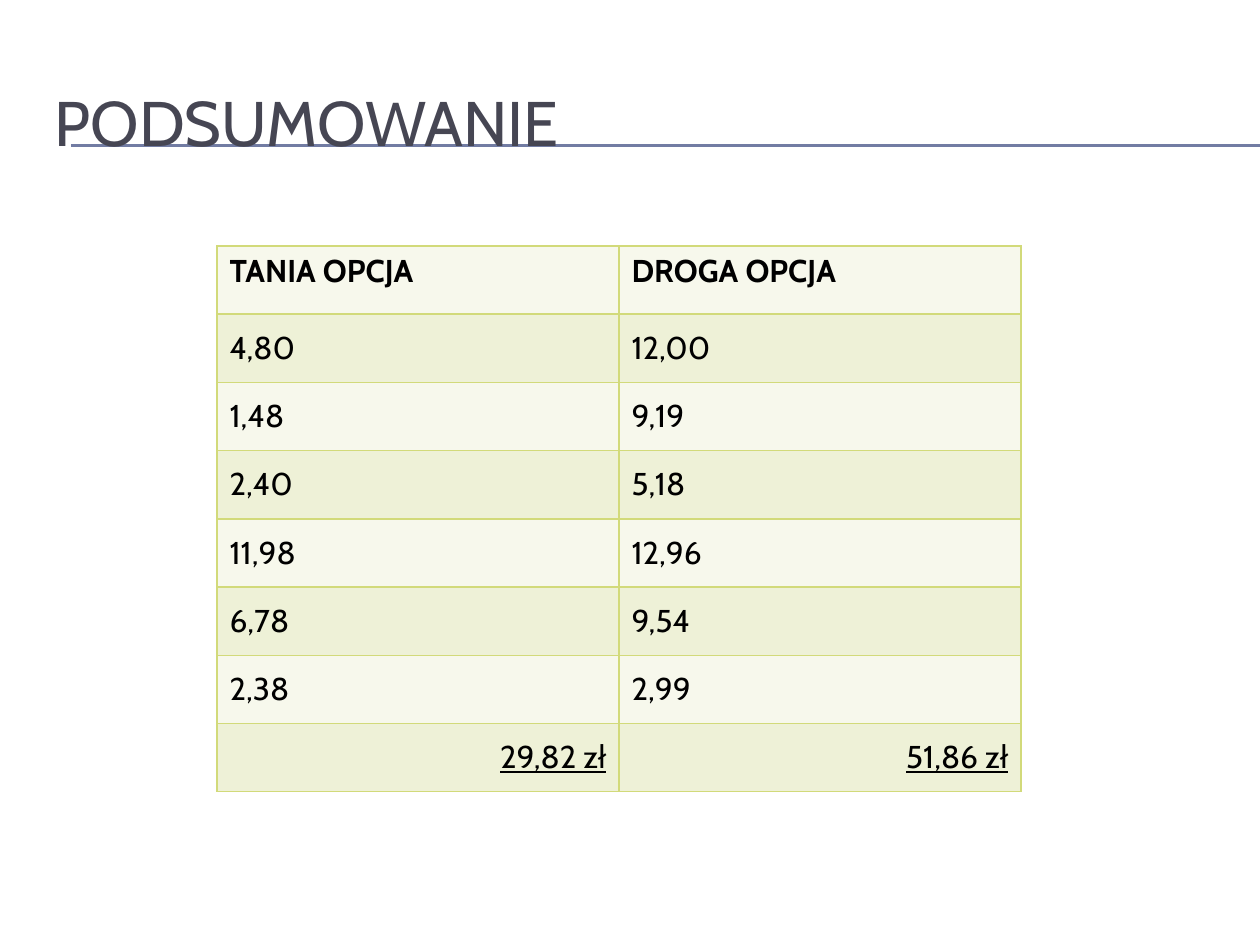
from lxml import etree
from pptx import Presentation
from pptx import util as u
from pptx.dml.color import RGBColor
from pptx.enum import shapes, text
from pptx.oxml.ns import qn

PX = 914400 // 126
FONT = "Cabin"
COLORS = {
    "title": "464653", "rule": "727CA3", "text": "000000",
    "border": "D2DA7A", "light": "F7F8EC", "dark": "EEF1D7",
}
TITLE = "PODSUMOWANIE"
ROWS = [
    ("TANIA OPCJA", "DROGA OPCJA"),
    ("4,80", "12,00"),
    ("1,48", "9,19"),
    ("2,40", "5,18"),
    ("11,98", "12,96"),
    ("6,78", "9,54"),
    ("2,38", "2,99"),
    ("29,82 zł", "51,86 zł"),
]
TITLE_BOX = (42, 63, 1197, 116)
TABLE_BOX = (217, 246, 804, 546)
RULE_X = (71, 1260)
RULES_Y = (145, 146)


def px(*vals):
    return [u.Emu(v * PX) for v in vals]


def color(name):
    return RGBColor.from_string(COLORS[name])


def style(par, size, tint, bold=False, under=False):
    for run in par.runs:
        font = run.font
        font.name, font.size = FONT, u.Pt(size)
        font.bold, font.underline = bold, under
        font.color.rgb = color(tint)


def add_rule(slide, y):
    x1, x2 = RULE_X
    rule = slide.shapes.add_connector(
        shapes.MSO_CONNECTOR.STRAIGHT, *px(x1, y, x2, y))
    rule.line.color.rgb = color("rule")
    rule.line.width = u.Pt(0.75)
    etree.SubElement(rule._element.spPr, qn("a:effectLst"))
    return rule


def add_border(cell):
    props = cell._tc.get_or_add_tcPr()
    for side in ("a:lnL", "a:lnR", "a:lnT", "a:lnB"):
        line = etree.SubElement(props, qn(side), w=str(u.Pt(1)))
        fill = etree.SubElement(line, qn("a:solidFill"))
        etree.SubElement(fill, qn("a:srgbClr"), val=COLORS["border"])


def add_title(slide):
    title = slide.shapes.title
    title.left, title.top, title.width, title.height = px(*TITLE_BOX)
    frame = title.text_frame
    frame.text = TITLE
    frame.vertical_anchor = text.MSO_ANCHOR.MIDDLE
    frame.paragraphs[0].alignment = text.PP_ALIGN.LEFT
    style(frame.paragraphs[0], 36, "title")
    return title


def add_prices(slide):
    table = slide.shapes.add_table(
        len(ROWS), len(ROWS[0]), *px(*TABLE_BOX)).table
    for r, row in enumerate(ROWS):
        head, total = r == 0, r == len(ROWS) - 1
        for c, word in enumerate(row):
            cell = table.cell(r, c)
            cell.text = word
            add_border(cell)
            cell.fill.solid()
            cell.fill.fore_color.rgb = color("dark" if r % 2 else "light")
            if not head:
                cell.vertical_anchor = text.MSO_ANCHOR.MIDDLE
            par = cell.text_frame.paragraphs[0]
            if total:
                par.alignment = text.PP_ALIGN.RIGHT
            style(par, 18, "text", bold=head, under=total)


def main():
    prs = Presentation()
    prs.slide_width, prs.slide_height = px(1260, 945)
    slide = prs.slides.add_slide(prs.slide_layouts[5])
    title = add_title(slide)
    for y in RULES_Y:
        # Rules lie behind the title.
        title._element.addprevious(add_rule(slide, y)._element)
    add_prices(slide)
    prs.save("out.pptx")


if __name__ == "__main__":
    main()
